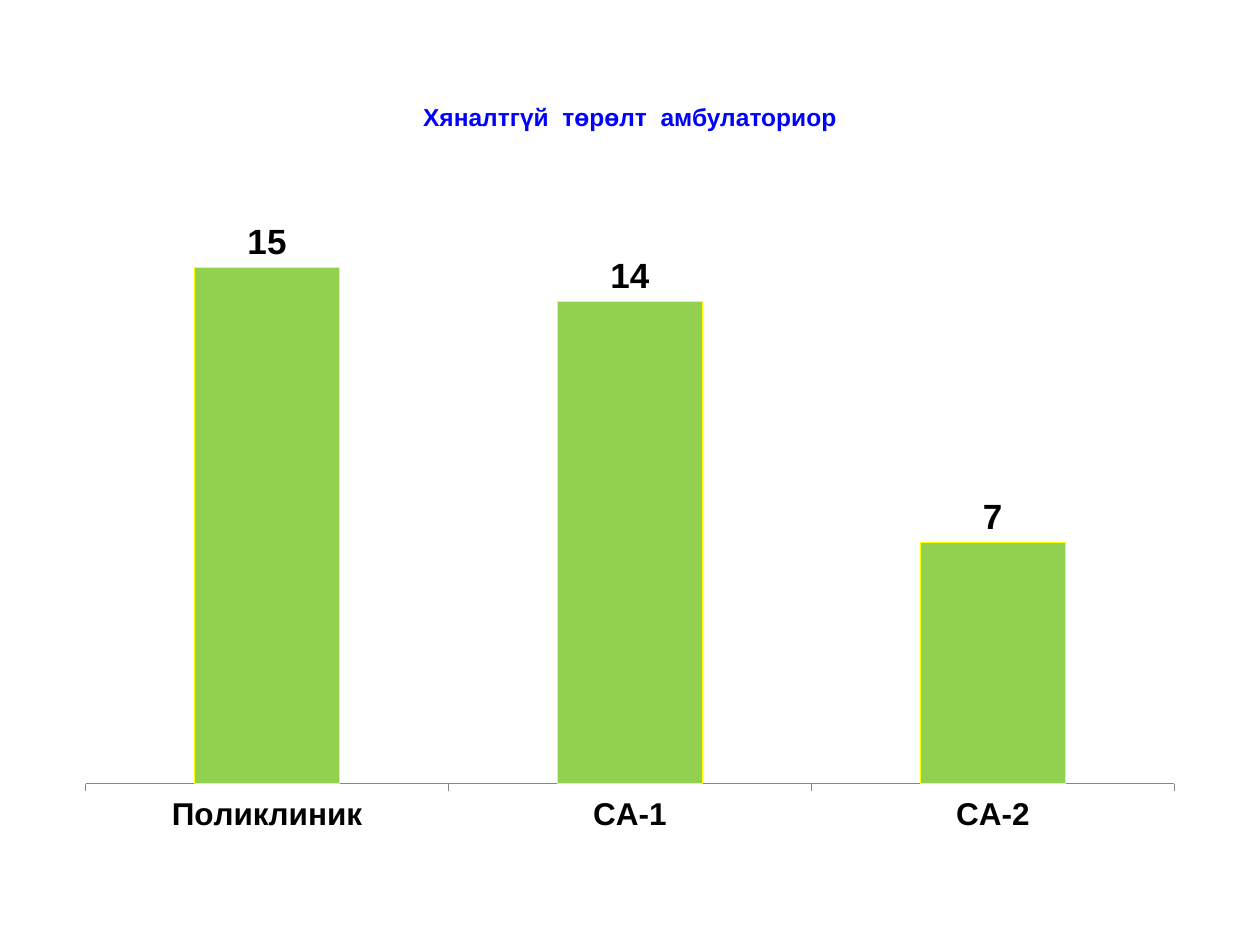
import dataclasses

import pptx
import pptx.chart.data
import pptx.dml.color
import pptx.enum.chart
import pptx.enum.text
import pptx.util

Inches = pptx.util.Inches
Pt = pptx.util.Pt
RGB = pptx.dml.color.RGBColor.from_string


@dataclasses.dataclass(frozen=True)
class Theme:
    """Colours, fonts and type sizes of the slide."""
    title: str = "0000FF"
    text: str = "000000"
    bar: str = "92D050"
    bar_line: str = "FFFF00"
    axis: str = "868686"
    font: str = "Arial"
    chart_font: str = "Calibri"
    title_size: int = 14
    axis_size: int = 18
    label_size: int = 20


THEME = Theme()


def style_font(font, size, color, name=THEME.font, bold=True):
    """Apply size, colour, typeface and weight to a font."""
    font.size = Pt(size)
    font.bold = bold
    font.name = name
    font.color.rgb = RGB(color)


def add_title(s, text, left, top, width, height):
    """Place the slide title in the given box."""
    sp = s.shapes.title
    sp.left, sp.top, sp.width, sp.height = left, top, width, height
    tf = sp.text_frame
    tf.text = text
    tf.vertical_anchor = pptx.enum.text.MSO_ANCHOR.MIDDLE
    p = tf.paragraphs[0]
    p.alignment = pptx.enum.text.PP_ALIGN.CENTER
    style_font(p.runs[0].font, THEME.title_size, THEME.title)


def add_births_chart(s, counts, left, top, width, height):
    """Place the column chart of births by clinic in the given box."""
    data = pptx.chart.data.CategoryChartData()
    data.categories = list(counts)
    data.add_series("Series 1", list(counts.values()))
    kind = pptx.enum.chart.XL_CHART_TYPE.COLUMN_CLUSTERED
    chart = s.shapes.add_chart(kind, left, top, width, height, data).chart
    chart.has_legend = False
    chart.has_title = False
    style_font(chart.font, THEME.axis_size, THEME.text, THEME.chart_font, False)

    cat_axis = chart.category_axis
    cat_axis.major_tick_mark = pptx.enum.chart.XL_TICK_MARK.OUTSIDE
    cat_axis.format.line.color.rgb = RGB(THEME.axis)
    cat_axis.format.line.width = Pt(0.75)
    style_font(cat_axis.tick_labels.font, THEME.axis_size, THEME.text)

    val_axis = chart.value_axis
    val_axis.visible = False
    val_axis.has_major_gridlines = False
    val_axis.minimum_scale = 0
    val_axis.maximum_scale = 16

    plot = chart.plots[0]
    plot.gap_width = 150
    plot.vary_by_categories = False
    bars = plot.series[0]
    bars.format.fill.solid()
    bars.format.fill.fore_color.rgb = RGB(THEME.bar)
    bars.format.line.color.rgb = RGB(THEME.bar_line)
    bars.format.line.width = Pt(0.75)
    labels = bars.data_labels
    labels.show_value = True
    labels.position = pptx.enum.chart.XL_LABEL_POSITION.OUTSIDE_END
    style_font(labels.font, THEME.label_size, THEME.text)


def main():
    """Build the slide and save it."""
    prs = pptx.Presentation()
    prs.slide_width, prs.slide_height = Inches(10), Inches(7.5)
    s = prs.slides.add_slide(prs.slide_layouts.get_by_name("Title Only"))
    left, width = Inches(0.5), Inches(9)
    add_title(s, "Хяналтгүй  төрөлт  амбулаториор",
              left, Inches(0.3), width, Inches(1.25))
    add_births_chart(s, {"Поликлиник": 15, "СА-1": 14, "СА-2": 7},
                     left, Inches(1.75), width, Inches(4.95))
    prs.save("out.pptx")


if __name__ == "__main__":
    main()
